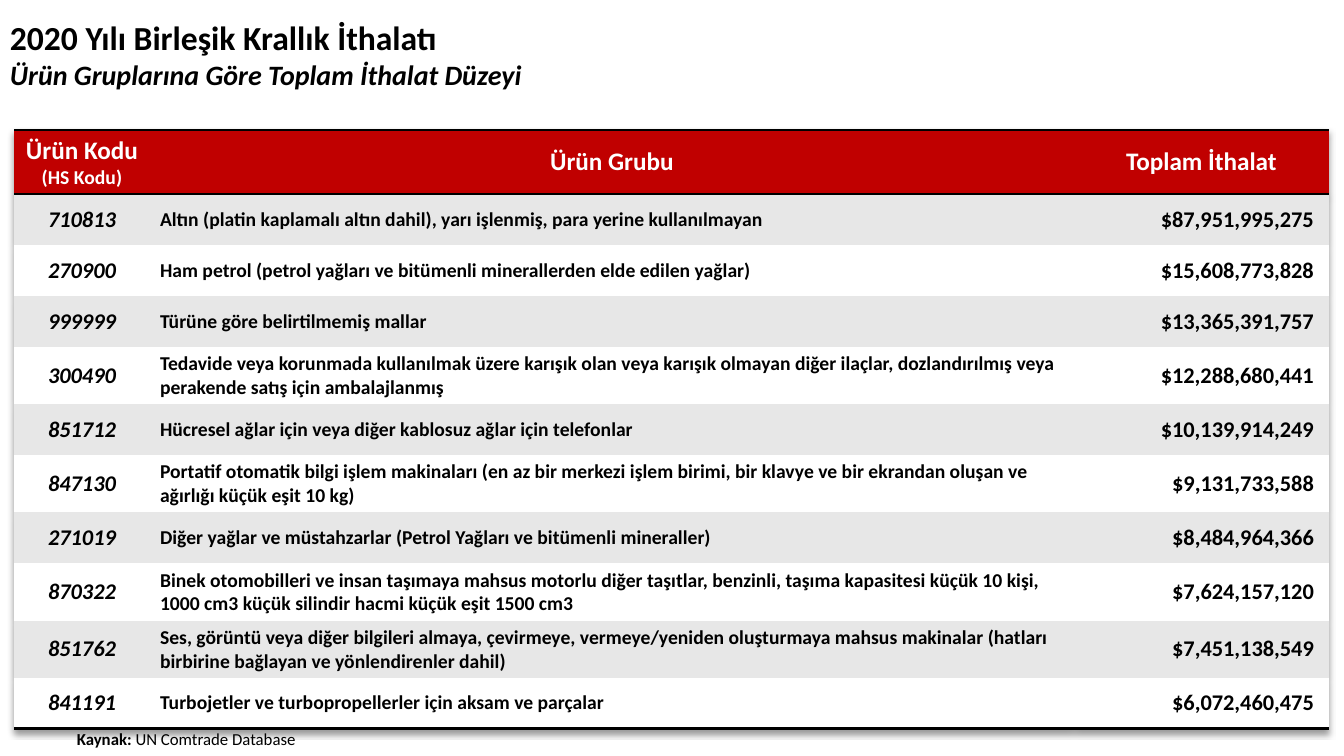
"""Build the slide of United Kingdom imports by product group in 2020."""
from lxml import etree
from pptx import Presentation
from pptx.dml.color import RGBColor
from pptx.enum.text import MSO_ANCHOR, PP_ALIGN
from pptx.oxml import parse_xml
from pptx.util import Pt

PX = 914400 / 100.8
FONT = "Calibri"
BLACK = RGBColor(0x00, 0x00, 0x00)
WHITE = RGBColor(0xFF, 0xFF, 0xFF)
RED = RGBColor(0xC0, 0x00, 0x00)
GRAY = RGBColor(0xE7, 0xE7, 0xE7)
LEFT, CENTER, RIGHT = PP_ALIGN.LEFT, PP_ALIGN.CENTER, PP_ALIGN.RIGHT
MIDDLE = MSO_ANCHOR.MIDDLE
DRAWING = "http://schemas.openxmlformats.org/drawingml/2006/main"
PLAIN_TABLE = "{2D5ABB26-0587-4C30-8999-92F81FD0307C}"
COLUMN_WIDTHS = [136, 924, 255]
HEADER_HEIGHT, SHORT_HEIGHT, TALL_HEIGHT = 64, 51, 57
LONG_TEXT = 100
HEADINGS = ["Ürün Kodu\n(HS Kodu)", "Ürün Grubu", "Toplam İthalat"]
PRODUCTS = [
    ("710813", "Altın (platin kaplamalı altın dahil), yarı işlenmiş, para yerine kullanılmayan",
     "$87,951,995,275"),
    ("270900", "Ham petrol (petrol yağları ve bitümenli minerallerden elde edilen yağlar)",
     "$15,608,773,828"),
    ("999999", "Türüne göre belirtilmemiş mallar", "$13,365,391,757"),
    ("300490", "Tedavide veya korunmada kullanılmak üzere karışık olan veya karışık olmayan "
     "diğer ilaçlar, dozlandırılmış veya perakende satış için ambalajlanmış",
     "$12,288,680,441"),
    ("851712", "Hücresel ağlar için veya diğer kablosuz ağlar için telefonlar",
     "$10,139,914,249"),
    ("847130", "Portatif otomatik bilgi işlem makinaları (en az bir merkezi işlem birimi, "
     "bir klavye ve bir ekrandan oluşan ve ağırlığı küçük eşit 10 kg)",
     "$9,131,733,588"),
    ("271019", "Diğer yağlar ve müstahzarlar (Petrol Yağları ve bitümenli mineraller)",
     "$8,484,964,366"),
    ("870322", "Binek otomobilleri ve insan taşımaya mahsus motorlu diğer taşıtlar, benzinli, "
     "taşıma kapasitesi küçük 10 kişi, 1000 cm3 küçük silindir hacmi küçük eşit 1500 cm3",
     "$7,624,157,120"),
    ("851762", "Ses, görüntü veya diğer bilgileri almaya, çevirmeye, vermeye/yeniden "
     "oluşturmaya mahsus makinalar (hatları birbirine bağlayan ve yönlendirenler dahil)",
     "$7,451,138,549"),
    ("841191", "Turbojetler ve turbopropellerler için aksam ve parçalar", "$6,072,460,475"),
]


def px(*lengths):
    return [round(length * PX) for length in lengths]


def style(span, size, color=BLACK, bold=True, italic=False):
    font = span.font
    font.name, font.size, font.color.rgb = FONT, Pt(size), color
    font.bold, font.italic = bold, italic


deck = Presentation()
deck.slide_width, deck.slide_height = px(1344, 756)
page = deck.slides.add_slide(deck.slide_layouts[6])

title = page.shapes.add_textbox(*px(0, 12, 1344, 85)).text_frame
title.word_wrap = True
title.text = "2020 Yılı Birleşik Krallık İthalatı\nÜrün Gruplarına Göre Toplam İthalat Düzeyi"
style(title.paragraphs[0].runs[0], 24)
style(title.paragraphs[1].runs[0], 20, italic=True)

rows = [HEADINGS, *PRODUCTS]
heights = [HEADER_HEIGHT] + [
    TALL_HEIGHT if len(group) > LONG_TEXT else SHORT_HEIGHT for _, group, _ in PRODUCTS
]
table = page.shapes.add_table(
    len(rows), len(COLUMN_WIDTHS), *px(14, 130, sum(COLUMN_WIDTHS), sum(heights))
).table
for column, width in zip(table.columns, px(*COLUMN_WIDTHS)):
    column.width = width
for row, height in zip(table.rows, px(*heights)):
    row.height = height

properties = table._tbl.tblPr
properties.find(f"{{{DRAWING}}}tableStyleId").text = PLAIN_TABLE
properties.insert(0, parse_xml(
    f'<a:effectLst xmlns:a="{DRAWING}"><a:outerShdw blurRad="50800" dist="38100" '
    'dir="5400000" algn="t" rotWithShape="0"><a:prstClr val="black">'
    '<a:alpha val="40000"/></a:prstClr></a:outerShdw></a:effectLst>'
))

for row_index, texts in enumerate(rows):
    header = row_index == 0
    edges = ["lnT", "lnB"] if header else ["lnB"] if row_index == len(PRODUCTS) else []
    fill = RED if header else GRAY if row_index % 2 else WHITE
    alignments = [CENTER] * 3 if header else [CENTER, LEFT, RIGHT]
    sizes = [18] * 3 if header else [16, 14, 16]
    for column_index, text in enumerate(texts):
        cell = table.cell(row_index, column_index)
        cell.vertical_anchor = MIDDLE
        for edge in edges:
            line = etree.SubElement(cell._tc.get_or_add_tcPr(), f"{{{DRAWING}}}{edge}", w=str(Pt(2)))
            solid = etree.SubElement(line, f"{{{DRAWING}}}solidFill")
            etree.SubElement(solid, f"{{{DRAWING}}}srgbClr", val=str(BLACK))
        cell.fill.solid()
        cell.fill.fore_color.rgb = fill
        if alignments[column_index] == RIGHT:
            cell.margin_right = px(15)[0]
        cell.text_frame.text = text
        for line_index, para in enumerate(cell.text_frame.paragraphs):
            para.alignment = alignments[column_index]
            style(para.runs[0], 14 if line_index else sizes[column_index],
                  WHITE if header else BLACK, italic=not header and column_index == 0)

source = page.shapes.add_textbox(*px(67, 724, 242, 30)).text_frame
source.word_wrap = False
for text, bold in [("Kaynak:", True), (" UN Comtrade Database", False)]:
    span = source.paragraphs[0].add_run()
    span.text = text
    style(span, 12, bold=bold)

deck.save("out.pptx")
